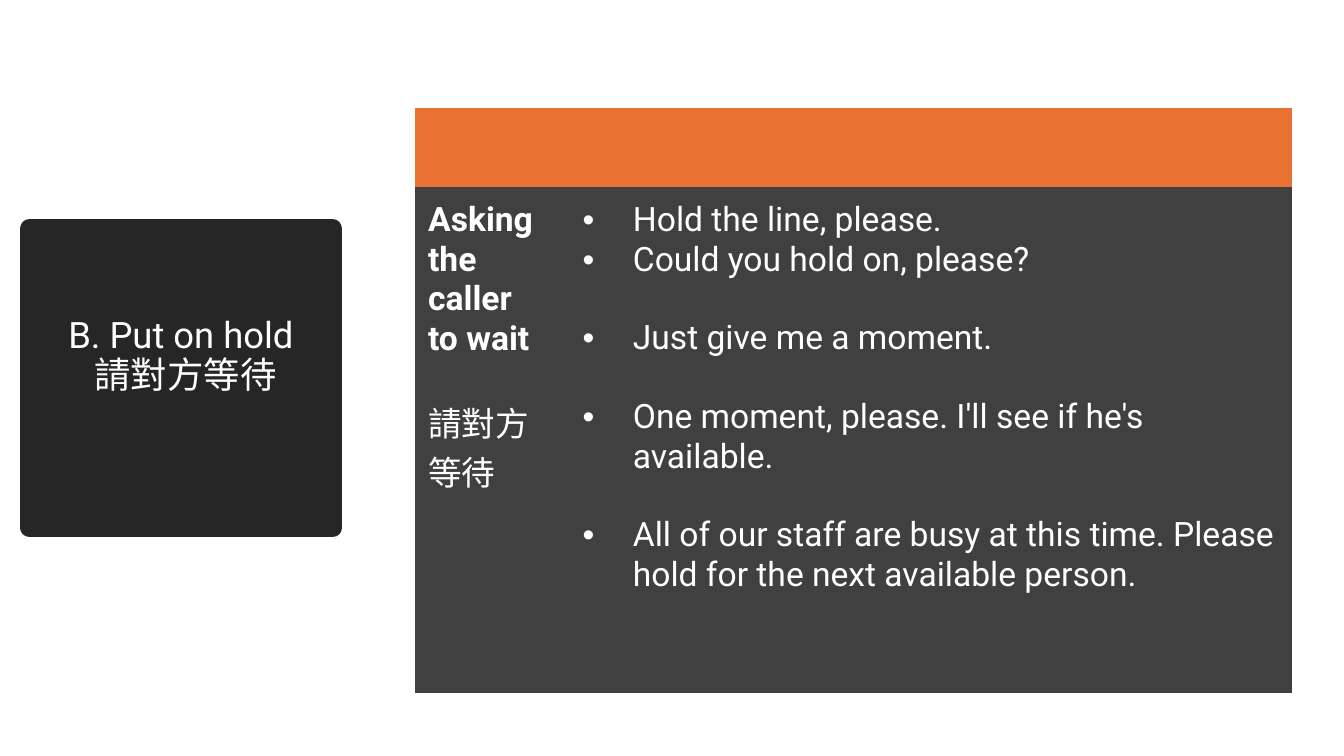
from dataclasses import dataclass

import pptx
import pptx.dml.color
import pptx.enum.shapes
import pptx.enum.text
import pptx.oxml.ns
import pptx.util
from lxml import etree
from pptx.util import Cm, Pt

qn = pptx.oxml.ns.qn


@dataclass(frozen=True)
class Theme:
    white: str = "FFFFFF"
    title_fill: str = "262626"
    header_fill: str = "E97132"
    body_fill: str = "404040"
    font: str = "Roboto"
    cjk_font: str = "Arial"
    title_size: int = 26
    body_size: int = 24
    title_line: float = 13.75
    gap: int = 28  # one body line, in points


THEME = Theme()
NO_STYLE = "{2D5ABB26-0587-4C30-8999-92F81FD0307C}"

# Each phrase with whether a gap follows it
PHRASES = [
    ("Hold the line, please.", False),
    ("Could you hold on, please?", True),
    ("Just give me a moment.", True),
    ("One moment, please. I'll see if he's available.", True),
    ("All of our staff are busy at this time. "
     "Please hold for the next available person.", False),
]


def rgb(color):
    return pptx.dml.color.RGBColor.from_string(color)


def paint(fill, color):
    fill.solid()
    fill.fore_color.rgb = rgb(color)


def add_run(p, text, size, font=THEME.font, bold=False):
    r = p.add_run()
    r.text = text
    r.font.name = font
    r.font.size = Pt(size)
    r.font.bold = bold
    r.font.color.rgb = rgb(THEME.white)


def add_bullet(p):
    pPr = p._p.get_or_add_pPr()
    pPr.set("marL", str(Cm(1.27)))
    pPr.set("indent", str(-Cm(1.27)))
    etree.SubElement(pPr, qn("a:buFont")).set("typeface", "Arial")
    etree.SubElement(pPr, qn("a:buChar")).set("char", "•")


def add_title(s):
    sp = s.shapes.add_shape(pptx.enum.shapes.MSO_SHAPE.RECTANGLE,
                            Cm(0.74), Cm(5.77), Cm(7.65), Cm(7.52))
    sp.shadow.inherit = False
    paint(sp.fill, THEME.title_fill)
    paint(sp.line.fill, THEME.title_fill)
    sp.line.width = Pt(THEME.title_line)
    tf = sp.text_frame
    tf.word_wrap = True
    tf.vertical_anchor = pptx.enum.text.MSO_ANCHOR.MIDDLE
    tf.margin_bottom = Cm(1.2)
    p = tf.paragraphs[0]
    p.alignment = pptx.enum.text.PP_ALIGN.CENTER
    p.line_spacing = 0.9
    add_run(p, "B. Put on hold", THEME.title_size)
    p.add_line_break()
    add_run(p, " 請對方等待", THEME.title_size)


def add_phrase_table(s):
    """Add the table and return its two body cells."""
    frame = s.shapes.add_table(2, 2, Cm(10.46), Cm(2.72), Cm(22.1), Cm(14.73))
    table = frame.table
    table.first_row = table.horz_banding = False
    table._tbl.tblPr.find(qn("a:tableStyleId")).text = NO_STYLE
    for column, width in zip(table.columns, (3.89, 18.21)):
        column.width = Cm(width)
    for row, height, color in zip(table.rows, (2.0, 12.73),
                                  (THEME.header_fill, THEME.body_fill)):
        row.height = Cm(height)
        for cell in row.cells:
            paint(cell.fill, color)
            cell.margin_left = cell.margin_right = cell.margin_top = Cm(0.33)
            cell.margin_bottom = Cm(0.17)
    return table.rows[1].cells


def fill_topic(tf):
    p = tf.paragraphs[0]
    add_run(p, "Asking the caller", THEME.body_size, bold=True)
    p.add_line_break()
    add_run(p, "to wait", THEME.body_size, bold=True)
    p.space_after = Pt(THEME.gap)
    add_run(tf.add_paragraph(), "請對方等待", THEME.body_size, THEME.cjk_font)


def fill_phrases(tf):
    for i, (phrase, gap_follows) in enumerate(PHRASES):
        p = tf.add_paragraph() if i else tf.paragraphs[0]
        if gap_follows:
            p.space_after = Pt(THEME.gap)
        add_bullet(p)
        add_run(p, phrase, THEME.body_size)


def main():
    prs = pptx.Presentation()
    prs.slide_width, prs.slide_height = Cm(33.87), Cm(19.05)
    s = prs.slides.add_slide(prs.slide_layouts[6])
    add_title(s)
    topic, phrases = add_phrase_table(s)
    fill_topic(topic.text_frame)
    fill_phrases(phrases.text_frame)
    prs.save("out.pptx")


if __name__ == "__main__":
    main()
